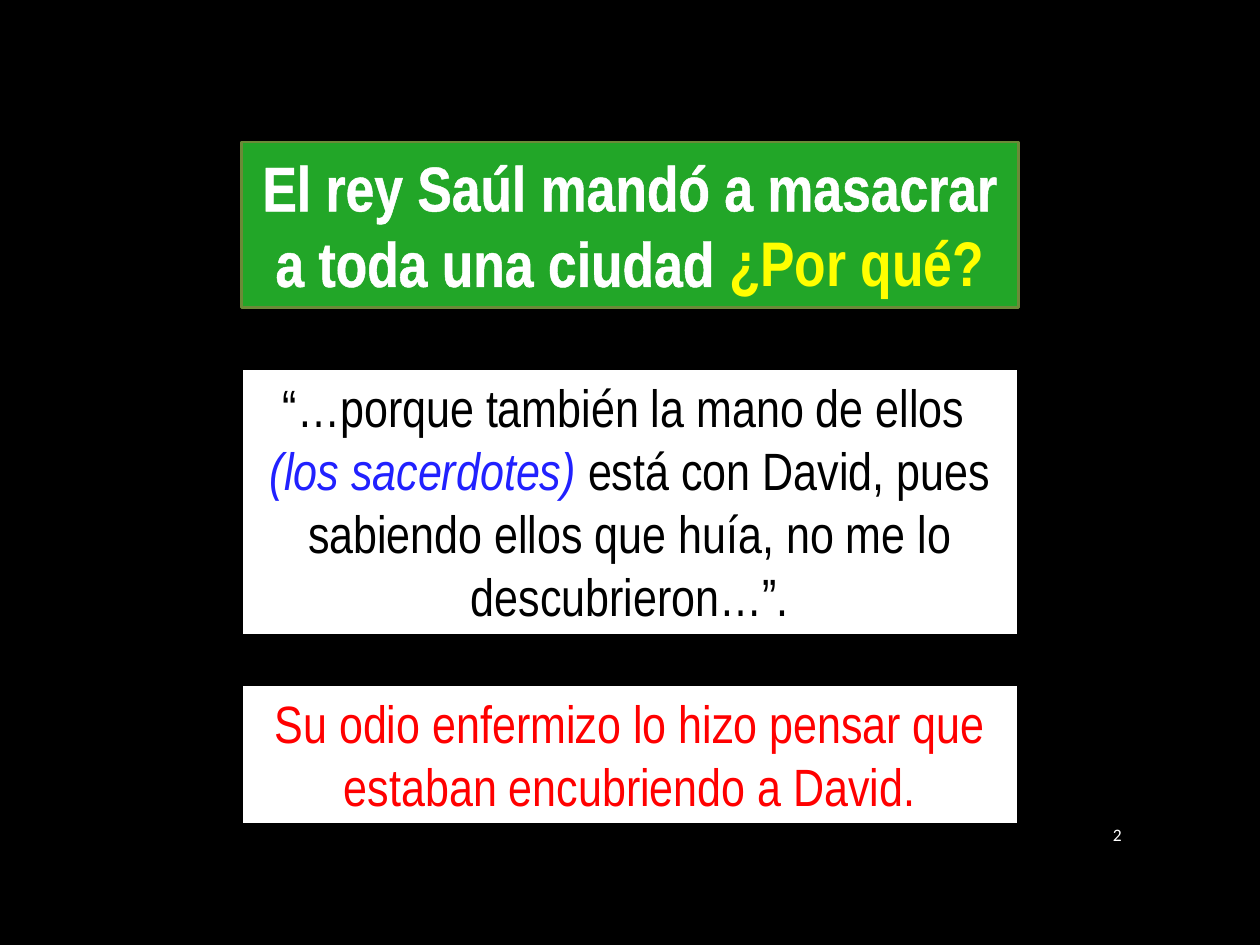
import pptx
import pptx.util
import pptx.dml.color
import pptx.enum.shapes
import pptx.enum.text
import pptx.oxml

Pt = pptx.util.Pt
Anchor = pptx.enum.text.MSO_ANCHOR
Align = pptx.enum.text.PP_ALIGN

THEME = {
    "background": "000000", "green": "22A628", "olive": "6B8A38",
    "white": "FFFFFF", "black": "000000", "yellow": "FFFF00",
    "blue": "2121FF", "red": "FF0000",
    "display": "Arial Narrow", "plain": "Calibri",
    "title": 36, "body": 30, "small": 10, "border": 1.5,
}

# Each panel holds paragraphs; each paragraph holds (text, colour, italic) runs.
PANELS = [
    {"top": 81.25, "height": 94.5, "fill": "green", "border": "olive",
     "size": "title", "bold": True, "outline": 0.75,
     "paragraphs": [[("El rey Saúl mandó a masacrar a toda una ciudad ", "white", False),
                     ("¿Por qué?", "yellow", False)]]},
    {"top": 210.5, "height": 152.6, "fill": "white", "border": "black",
     "size": "body", "bold": False, "outline": 1.5,
     "paragraphs": [[("“…porque también la mano de ellos ", "black", False)],
                    [("(los sacerdotes) ", "blue", True),
                     ("está con David, pues sabiendo ellos que huía, "
                      "no me lo descubrieron…”.", "black", False)]]},
    {"top": 391.25, "height": 80, "fill": "white", "border": "black",
     "size": "body", "bold": False, "outline": 1.5,
     "paragraphs": [[("Su odio enfermizo lo hizo pensar que estaban "
                      "encubriendo a David.", "red", False)]]},
]
PAGE_NUMBER = "2"
SLIDE_WIDTH, SLIDE_HEIGHT = 720, 540
PANEL_WIDTH = 444


def color(name):
    return pptx.dml.color.RGBColor.from_string(THEME[name])


def add_run(paragraph, text, ink, **formats):
    run = paragraph.add_run()
    run.text = text
    for name, value in formats.items():
        setattr(run.font, name, value)
    run.font.color.rgb = color(ink)
    return run


def outline_text(run, ink, width):
    """Stroke the letters in their own colour."""
    namespace = "http://schemas.openxmlformats.org/drawingml/2006/main"
    stroke = pptx.oxml.parse_xml(
        f'<a:ln xmlns:a="{namespace}" w="{int(Pt(width))}"><a:solidFill>'
        f'<a:srgbClr val="{THEME[ink]}"/></a:solidFill></a:ln>')
    run.font._element.insert(0, stroke)


def add_panel(slide, panel):
    left = (SLIDE_WIDTH - PANEL_WIDTH) / 2
    box = slide.shapes.add_shape(
        pptx.enum.shapes.MSO_SHAPE.RECTANGLE,
        Pt(left), Pt(panel["top"]), Pt(PANEL_WIDTH), Pt(panel["height"]))
    box.shadow.inherit = False
    box.fill.solid()
    box.fill.fore_color.rgb = color(panel["fill"])
    box.line.color.rgb = color(panel["border"])
    box.line.width = Pt(THEME["border"])
    frame = box.text_frame
    frame.word_wrap = True
    frame.auto_size = pptx.enum.text.MSO_AUTO_SIZE.SHAPE_TO_FIT_TEXT
    frame.vertical_anchor = Anchor.TOP
    for index, runs in enumerate(panel["paragraphs"]):
        paragraph = frame.add_paragraph() if index else frame.paragraphs[0]
        paragraph.alignment = Align.CENTER
        for text, ink, italic in runs:
            run = add_run(paragraph, text, ink, name=THEME["display"],
                          size=Pt(THEME[panel["size"]]),
                          bold=panel["bold"], italic=italic)
            outline_text(run, ink, panel["outline"])


def add_page_number(slide):
    box = slide.shapes.add_textbox(Pt(615), Pt(462.25), Pt(33), Pt(29.5))
    frame = box.text_frame
    frame.word_wrap = True
    frame.vertical_anchor = Anchor.MIDDLE
    paragraph = frame.paragraphs[0]
    paragraph.alignment = Align.RIGHT
    add_run(paragraph, PAGE_NUMBER, "white",
            name=THEME["plain"], size=Pt(THEME["small"]))


def main():
    deck = pptx.Presentation()
    deck.slide_width, deck.slide_height = Pt(SLIDE_WIDTH), Pt(SLIDE_HEIGHT)
    slide = deck.slides.add_slide(deck.slide_layouts[6])
    slide.background.fill.solid()
    slide.background.fill.fore_color.rgb = color("background")
    for panel in PANELS:
        add_panel(slide, panel)
    add_page_number(slide)
    deck.save("out.pptx")


if __name__ == "__main__":
    main()
